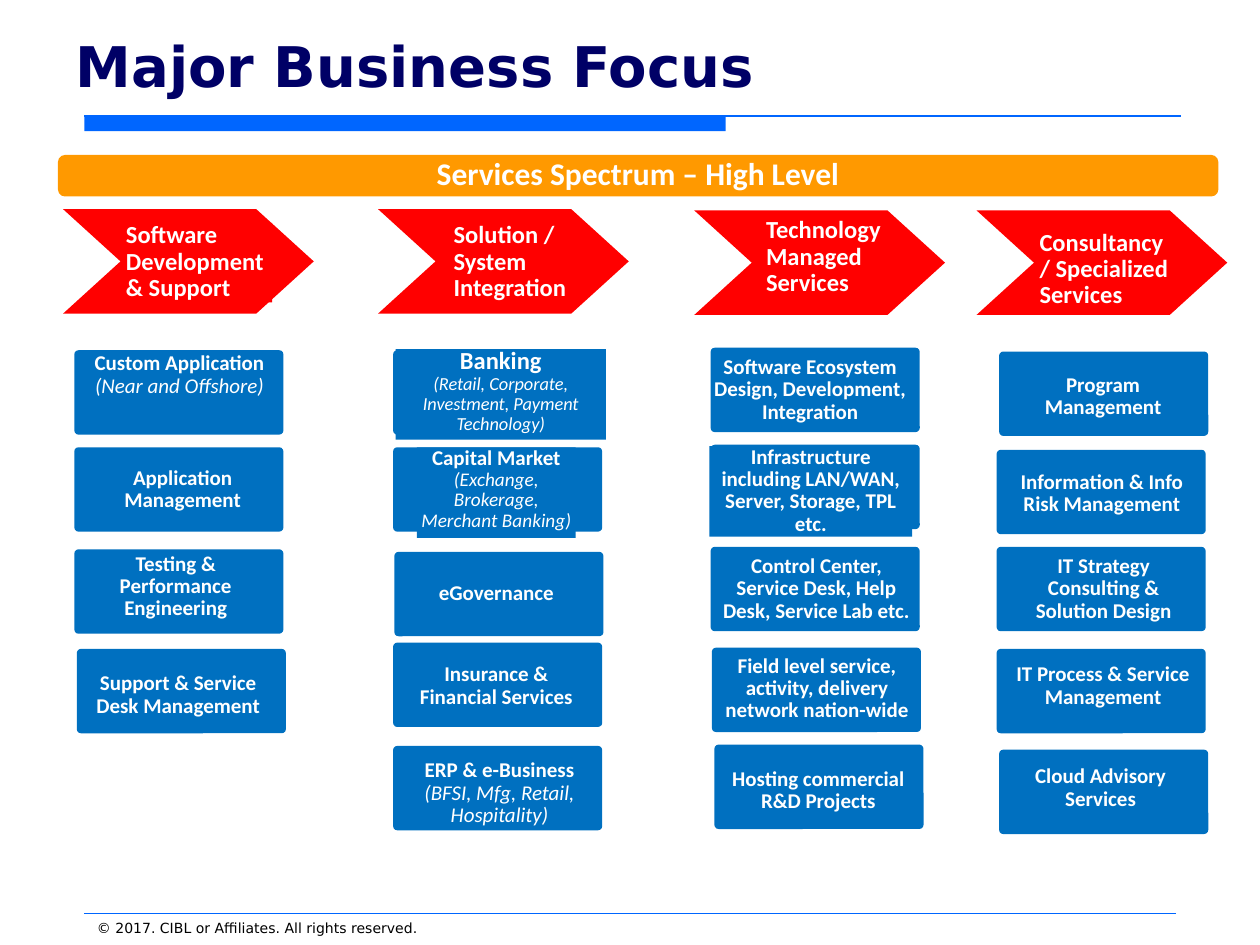
import pptx
import pptx.dml.color
import pptx.enum.shapes
import pptx.enum.text
import pptx.util
from lxml import etree

COLORS = {
    "title": "000066", "rule": "0066FF", "banner": "FF9900", "arrow": "FF0000",
    "card": "0070C0", "light": "FFFFFF", "dark": "000000",
}
SHAPES = pptx.enum.shapes.MSO_SHAPE
ALIGN = pptx.enum.text.PP_ALIGN
ANCHOR = pptx.enum.text.MSO_ANCHOR
AUTO_SIZE = pptx.enum.text.MSO_AUTO_SIZE

# The slide is a grid of 100 columns and 75 rows; all lengths are in its cells.
CELL = pptx.util.Inches(0.1)
LINE_ROWS = 0.15  # rows per point of text size

# Arrow left and top; label left, top, width and text
HEADINGS = [
    (5.0, 16.6, 10.0, 17.7, 11.6, ["Software", "Development", "& Support"]),
    (30.0, 16.6, 36.0, 17.7, 9.8, ["Solution / System Integration"]),
    (55.1, 16.7, 60.8, 17.3, 9.6, ["Technology Managed Services"]),
    (77.5, 16.7, 82.5, 18.3, 10.8, ["Consultancy / Specialized Services"]),
]

# Card left and top; label left, top, width, line count and bold text
CARDS = [
    (5.9, 35.5, 8.2, 37.1, 12.6, 2, "Application Management"),
    (5.9, 43.6, 6.3, 43.9, 15.3, 3, "Testing & Performance Engineering"),
    (6.1, 51.5, 6.5, 53.4, 15.3, 2, "Support & Service Desk Management"),
    (31.3, 43.8, 33.1, 46.2, 12.6, 1, "eGovernance"),
    (31.2, 51.0, 33.1, 52.7, 12.6, 2, "Insurance & Financial Services"),
    (56.4, 27.6, 56.6, 28.3, 15.4, 3,
     "Software Ecosystem Design, Development, Integration"),
    (56.4, 35.3, 56.3, 35.4, 16.1, 4,
     "Infrastructure including LAN/WAN, Server, Storage, TPL etc."),
    (56.4, 43.4, 57.1, 44.1, 15.4, 3,
     "Control Center, Service Desk, Help Desk, Service Lab etc."),
    (56.5, 51.4, 57.2, 52.0, 15.3, 3,
     "Field level service, activity, delivery network nation-wide"),
    (56.7, 59.1, 57.3, 61.0, 15.3, 2, "Hosting commercial R&D Projects"),
    (79.3, 27.9, 80.8, 29.7, 13.5, 2, "Program Management"),
    (79.1, 35.7, 80.7, 37.4, 13.5, 2, "Information & Info Risk Management"),
    (79.1, 43.4, 81.3, 44.1, 12.6, 3, "IT Strategy Consulting & Solution Design"),
    (79.1, 51.5, 79.9, 52.7, 15.3, 2, "IT Process & Service Management"),
    (79.3, 59.5, 79.7, 60.8, 15.3, 2, "Cloud Advisory Services"),
]

# As above, followed by the bold size, the italic detail and its size
DETAILED_CARDS = [
    (5.9, 27.8, 7.5, 28.0, 13.5, 3, "Custom Application", 12,
     "(Near and Offshore)", 12),
    (31.2, 27.8, 31.4, 27.7, 16.7, 4, "Banking", 14,
     "(Retail, Corporate, Investment, Payment Technology)", 10.5),
    (31.2, 35.5, 33.1, 35.5, 12.6, 4, "Capital Market", 12,
     "(Exchange, Brokerage, Merchant Banking)", 11),
    (31.2, 59.2, 32.0, 60.3, 15.3, 3, "ERP & e-Business", 12,
     "(BFSI, Mfg, Retail, Hospitality)", 12),
]


def cells(*lengths):
    return [round(length * CELL) for length in lengths]


def color(name):
    return pptx.dml.color.RGBColor.from_string(COLORS[name])


def format_paragraph(paragraph, size, color_name, font="Calibri", bold=True,
                     italic=False):
    for run in paragraph.runs:
        run.font.name = font
        run.font.size = pptx.util.Pt(size)
        run.font.bold = bold
        run.font.italic = italic
        run.font.color.rgb = color(color_name)


def add_block(slide, preset, fill, left, top, width, height, rounding=None):
    shape = slide.shapes.add_shape(preset, *cells(left, top, width, height))
    shape.shadow.inherit = False
    shape.fill.solid()
    shape.fill.fore_color.rgb = color(fill)
    shape.line.fill.background()
    if rounding is not None:
        shape.adjustments[0] = rounding
    return shape


def set_text(shape, texts, size, alignment):
    """Write one bold light paragraph per text, without margins."""
    frame = shape.text_frame
    frame.word_wrap = True
    frame.margin_left = frame.margin_right = 0
    frame.margin_top = frame.margin_bottom = 0
    frame.text = "\n".join(texts)
    for paragraph in frame.paragraphs:
        paragraph.alignment = alignment
        paragraph.line_spacing = 0.89
        format_paragraph(paragraph, size, "light")


def add_label(slide, fill, left, top, width, lines, texts, size, alignment):
    label = add_block(slide, SHAPES.RECTANGLE, fill, left, top, width,
                      lines * size * LINE_ROWS)
    set_text(label, texts, size, alignment)
    label.text_frame.vertical_anchor = ANCHOR.TOP
    label.text_frame.auto_size = AUTO_SIZE.SHAPE_TO_FIT_TEXT
    return label


def add_card(slide, left, top, label_left, label_top, label_width, lines, *texts):
    add_block(slide, SHAPES.ROUNDED_RECTANGLE, "card", left, top, 16.6, 6.7, 0.05)
    return add_label(slide, "card", label_left, label_top, label_width, lines,
                     texts, 12, ALIGN.CENTER)


def add_detailed_card(slide, *details):
    *card, name, name_size, detail, detail_size = details
    label = add_card(slide, *card, name, detail)
    first, second = label.text_frame.paragraphs
    format_paragraph(first, name_size, "light")
    format_paragraph(second, detail_size, "light", bold=False, italic=True)


def add_heading(slide, left, top, label_left, label_top, label_width, texts):
    add_block(slide, SHAPES.CHEVRON, "arrow", left, top, 19.9, 8.3, 0.55)
    add_label(slide, "arrow", label_left, label_top, label_width, 3, texts, 14,
              ALIGN.LEFT)


def add_rule(slide, left, right, top, weight):
    rule = slide.shapes.add_connector(
        pptx.enum.shapes.MSO_CONNECTOR.STRAIGHT, *cells(left, top, right, top))
    rule.line.color.rgb = color("rule")
    rule.line.width = pptx.util.Pt(weight)
    properties = rule.element.spPr
    etree.SubElement(properties, pptx.oxml.ns.qn("a:effectLst"))


def set_title(slide, text):
    title = slide.shapes.title
    title.left, title.top, title.width, title.height = cells(5, 0, 87.5, 8.3)
    frame = title.text_frame
    frame.text = text
    frame.vertical_anchor = ANCHOR.BOTTOM
    frame.auto_size = AUTO_SIZE.NONE
    frame.paragraphs[0].alignment = ALIGN.LEFT
    format_paragraph(frame.paragraphs[0], 32, "title", "DejaVu Sans")


def add_footer(slide, text):
    footer = slide.shapes.add_textbox(*cells(6.7, 72.5, 72.5, 2.5))
    footer.text_frame.word_wrap = True
    footer.text_frame.text = text
    format_paragraph(footer.text_frame.paragraphs[0], 8, "dark", "DejaVu Sans",
                     bold=False)


def main():
    presentation = pptx.Presentation()
    presentation.slide_width, presentation.slide_height = cells(100, 75)
    slide = presentation.slides.add_slide(presentation.slide_layouts[5])
    set_title(slide, "Major Business Focus")
    add_block(slide, SHAPES.RECTANGLE, "rule", 6.7, 9.2, 50.9, 1.2)
    add_rule(slide, 6.7, 93.7, 9.2, 0.75)
    add_rule(slide, 6.7, 93.3, 72.5, 0.25)
    add_footer(slide, "© 2017. CIBL or Affiliates. All rights reserved.")
    banner = add_block(slide, SHAPES.ROUNDED_RECTANGLE, "banner",
                       4.6, 12.3, 92.1, 3.3, 0.17)
    set_text(banner, ["Services Spectrum – High Level"], 18, ALIGN.CENTER)
    for heading in HEADINGS:
        add_heading(slide, *heading)
    for card in CARDS:
        add_card(slide, *card)
    for card in DETAILED_CARDS:
        add_detailed_card(slide, *card)
    presentation.save("out.pptx")


if __name__ == "__main__":
    main()
